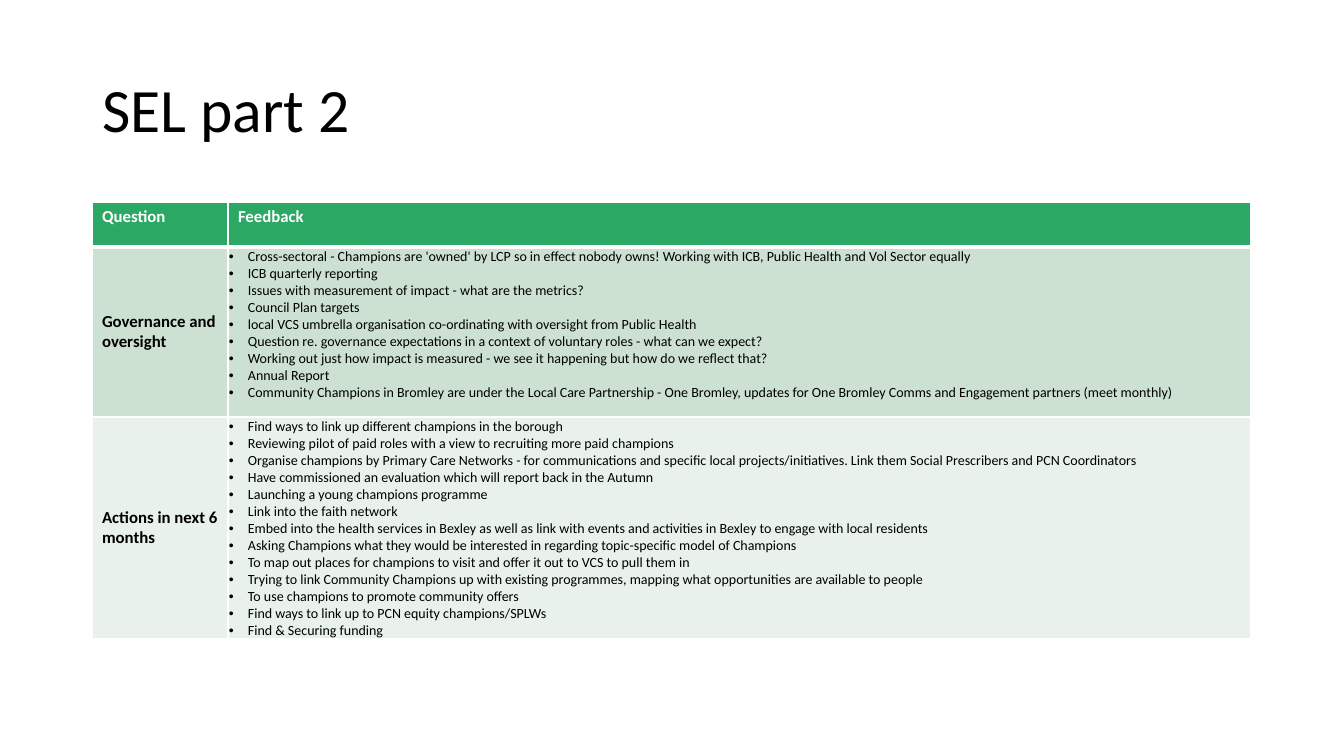
from lxml.etree import SubElement
from pptx import Presentation
from pptx.dml.color import RGBColor as Rgb
from pptx.enum.text import MSO_ANCHOR as Anchor, PP_ALIGN as Align
from pptx.oxml import parse_xml
from pptx.oxml.ns import nsdecls, qn
from pptx.util import Pt

SCALE = 914400 / 100.8
WHITE, BLACK, GREEN = "FFFFFF", "000000", "2CA865"
HEADS = ["Question", "Feedback"]
ROWS = [
    ("Governance and oversight", "CDE1D3", 170, [
        "Cross-sectoral - Champions are 'owned' by LCP so in effect nobody owns! "
        "Working with ICB, Public Health and Vol Sector equally",
        "ICB quarterly reporting",
        "Issues with measurement of impact - what are the metrics?",
        "Council Plan targets",
        "local VCS umbrella organisation co-ordinating with oversight from Public Health",
        "Question re. governance expectations in a context of voluntary roles - what can we expect?",
        "Working out just how impact is measured - we see it happening but how do we reflect that?",
        "Annual Report",
        "Community Champions in Bromley are under the Local Care Partnership - One Bromley, "
        "updates for One Bromley Comms and Engagement partners (meet monthly)",
    ]),
    ("Actions in next 6 months", "E8F1EA", 222, [
        "Find ways to link up different champions in the borough",
        "Reviewing pilot of paid roles with a view to recruiting more paid champions",
        "Organise champions by Primary Care Networks - for communications and specific local "
        "projects/initiatives. Link them Social Prescribers and PCN Coordinators",
        "Have commissioned an evaluation which will report back in the Autumn",
        "Launching a young champions programme",
        "Link into the faith network",
        "Embed into the health services in Bexley as well as link with events and activities "
        "in Bexley to engage with local residents",
        "Asking Champions what they would be interested in regarding topic-specific model of Champions",
        "To map out places for champions to visit and offer it out to VCS to pull them in",
        "Trying to link Community Champions up with existing programmes, mapping what "
        "opportunities are available to people",
        "To use champions to promote community offers",
        "Find ways to link up to PCN equity champions/SPLWs",
        "Find & Securing funding",
    ]),
]


def px(n):
    return round(n * SCALE)


def rgb(code):
    return Rgb.from_string(code)


class Deck:
    def __init__(self, font):
        self.font = font
        self.prs = Presentation()
        self.prs.slide_width, self.prs.slide_height = px(1344), px(756)
        self.slide = self.prs.slides.add_slide(self.prs.slide_layouts[5])

    def style(self, frame, size, color, bold=False):
        for para in frame.paragraphs:
            for run in para.runs:
                font = run.font
                font.name, font.size, font.bold = self.font, Pt(size), bold
                font.color.rgb = rgb(color)

    def title(self, text, x, y, w, h):
        box = self.slide.shapes.title
        box.left, box.top, box.width, box.height = map(px, (x, y, w, h))
        frame = box.text_frame
        frame.text = text
        frame.vertical_anchor = Anchor.MIDDLE
        para = frame.paragraphs[0]
        para.alignment, para.line_spacing = Align.LEFT, 0.9
        self.style(frame, 44, BLACK)

    def table(self, x, y, cols, rows):
        frame = self.slide.shapes.add_table(
            len(rows), len(cols), px(x), px(y), px(sum(cols)), px(sum(rows)))
        grid = frame.table
        grid.horz_banding = False
        for col, w in zip(grid.columns, cols):
            col.width = px(w)
        for row, h in zip(grid.rows, rows):
            row.height = px(h)
        return grid

    def cell(self, cell, text, fill, color, base=1):
        cell.text_frame.text = text
        cell.fill.solid()
        cell.fill.fore_color.rgb = rgb(fill)
        self.style(cell.text_frame, 12, color, True)
        self.border(cell, base)

    def border(self, cell, base):
        props = cell._tc.get_or_add_tcPr()
        for i, (side, width) in enumerate(zip("LRTB", (1, 1, 1, base))):
            props.insert(i, parse_xml(
                f'<a:ln{side} {nsdecls("a")} w="{Pt(width)}"><a:solidFill>'
                f'<a:srgbClr val="{WHITE}"/></a:solidFill></a:ln{side}>'))

    def bullets(self, cell, items, fill):
        self.cell(cell, "\n".join(items), fill, BLACK)
        cell.margin_left = cell.margin_top = cell.margin_right = px(1)
        cell.margin_bottom = 0
        for para in cell.text_frame.paragraphs:
            props = para._p.get_or_add_pPr()
            props.set("marL", str(px(19)))
            props.set("indent", str(-px(19)))
            SubElement(props, qn("a:buFont"), typeface="Arial")
            SubElement(props, qn("a:buChar"), char="•")
        self.style(cell.text_frame, 10, BLACK)


def main():
    deck = Deck("Calibri")
    deck.title("SEL part 2", 92, 40, 1159, 146)
    grid = deck.table(92, 202, [136, 1023], [45] + [row[2] for row in ROWS])
    for i, head in enumerate(HEADS):
        deck.cell(grid.cell(0, i), head, GREEN, WHITE, 3)
    for i, (topic, fill, _, items) in enumerate(ROWS, 1):
        label = grid.cell(i, 0)
        deck.cell(label, topic, fill, BLACK)
        label.vertical_anchor = Anchor.MIDDLE
        deck.bullets(grid.cell(i, 1), items, fill)
    deck.prs.save("out.pptx")


if __name__ == "__main__":
    main()
